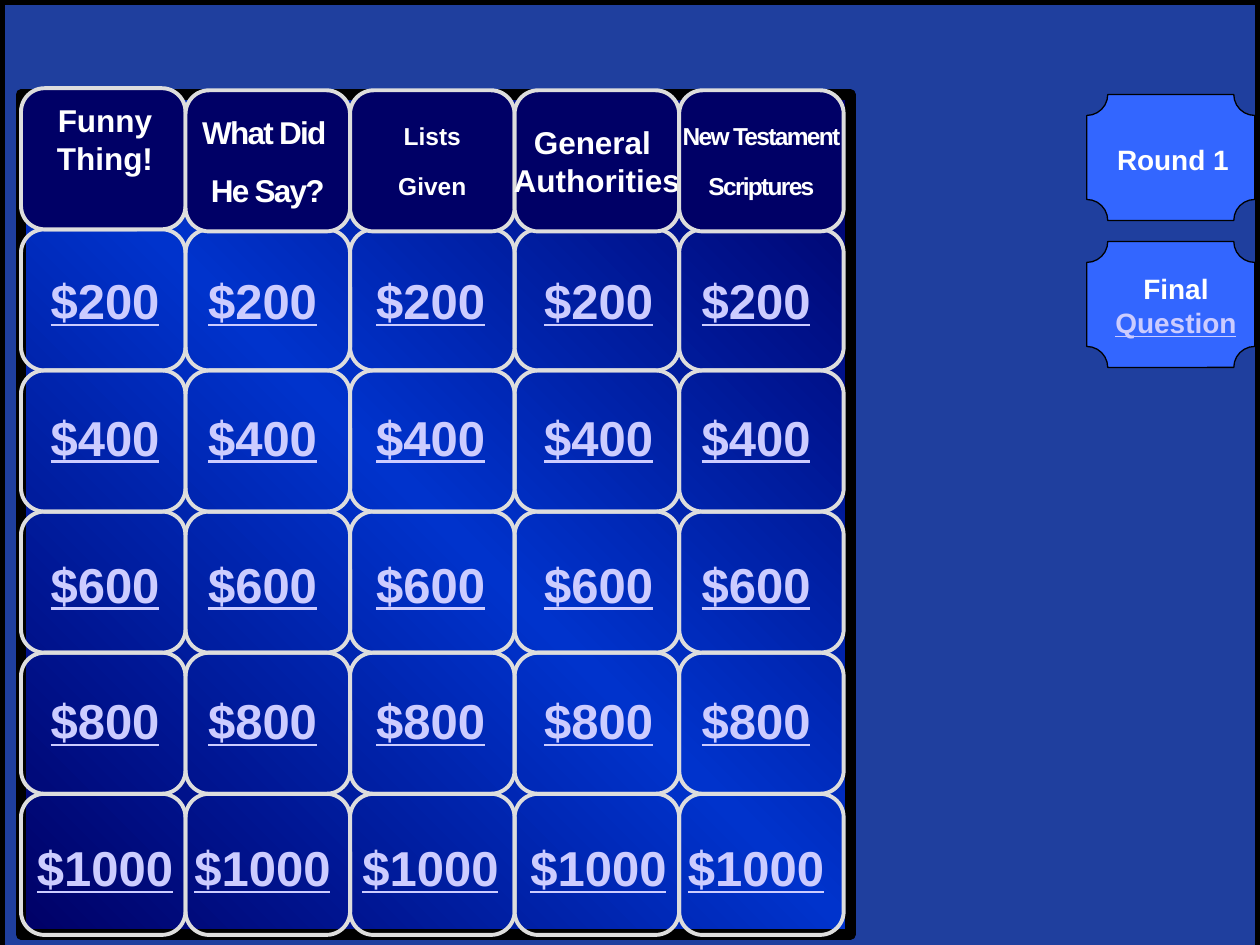
from copy import deepcopy

from pptx import Presentation
from pptx.dml.color import RGBColor as Rgb
from pptx.enum.shapes import MSO_SHAPE as Kind
from pptx.enum.text import MSO_ANCHOR as Anchor, MSO_AUTO_SIZE as Auto, PP_ALIGN as Align
from pptx.oxml.ns import qn
from pptx.util import Inches, Pt

THEME = dict(
    font="Arial", black="000000", white="FFFFFF", navy="000066", royal="0033CC",
    blue="3366FF", rim="DDDDDD", link="CCCCFF",
    small=14, label=16, head=18, prize=28,
)
UNIT = Inches(1) / 12  # the page grid has twelve units to the inch
WIDE, HIGH = 120, 90
CELL_W, CELL_H = 15.67, 13.44
LEFT, TOP = 2, 8.4


def draw(kind, x, y, w, h, fill, line, weight):
    """Add a shape placed in grid units."""
    box = page.shapes.add_shape(kind, *[int(v * UNIT) for v in (x, y, w, h)])
    box.shadow.inherit = False
    if fill:
        box.fill.solid()
        box.fill.fore_color.rgb = Rgb.from_string(THEME[fill])
    else:
        box.fill.background()
    box.line.color.rgb = Rgb.from_string(THEME[line])
    box.line.width = Pt(weight)
    return box


def write(frame, lines, size, after=0, tight=False):
    """Fill a frame with centred paragraphs, each a list of (text, colour)."""
    for i, runs in enumerate(lines):
        para = frame.add_paragraph() if i else frame.paragraphs[0]
        para.alignment = Align.CENTER
        if after:
            para.space_after = Pt(after)
        for text, color in runs:
            run = para.add_run()
            run.text = text
            font = run.font
            font.name, font.size, font.bold = THEME["font"], Pt(THEME[size]), True
            font.color.rgb = Rgb.from_string(THEME[color])
            if color == "link":
                font.underline = True
            if tight:
                run._r.get_or_add_rPr().set("spc", "-100")


deck = Presentation()
deck.slide_width, deck.slide_height = int(WIDE * UNIT), int(HIGH * UNIT)
page = deck.slides.add_slide(deck.slide_layouts[6])

# Backdrop: black under translucent blue
draw(Kind.RECTANGLE, 0, 0, WIDE, HIGH, "black", "black", 0.75)
veil = draw(Kind.RECTANGLE, 0, 0, WIDE, HIGH + 1, "blue", "black", 6)
tint = veil._element.spPr.find(qn("a:solidFill"))[0]
tint.append(tint.makeelement(qn("a:alpha"), {"val": "62000"}))

# Board with a three-stop diagonal gradient
board = draw(Kind.RECTANGLE, LEFT, 9, 79, 80, "navy", "black", 6)
board.fill.gradient()
board.fill.gradient_angle = 45
stops = board._element.spPr.find(qn("a:gradFill")).find(qn("a:gsLst"))
stops.insert(1, deepcopy(stops[0]))
for stop, place, color in zip(board.fill.gradient_stops, (0, 0.5, 1), ("navy", "royal", "navy")):
    stop.position = place
    stop.color.rgb = Rgb.from_string(THEME[color])

# Empty cells
for col in range(5):
    for row in range(1, 6):
        draw(Kind.ROUNDED_RECTANGLE, LEFT + col * CELL_W, TOP + row * CELL_H,
             CELL_W, CELL_H, None, "rim", 2.25)

# Category heads: lines, size, space after, tight spacing
heads = [
    ([], "head", 0, False),
    (["What Did ", "He Say?"], "head", 12, True),
    (["Lists", "Given"], "small", 12, False),
    (["General ", "Authorities"], "head", 0, False),
    (["New Testament", "Scriptures"], "small", 12, True),
]
for col, (lines, size, after, tight) in enumerate(heads):
    drop = 0.2 if col else 0
    cell = draw(Kind.ROUNDED_RECTANGLE, LEFT + col * CELL_W, TOP + drop,
                CELL_W, CELL_H, "navy", "rim", 2.25)
    if lines:
        cell.text_frame.word_wrap = False
        cell.text_frame.vertical_anchor = Anchor.MIDDLE
        write(cell.text_frame, [[(t, "white")] for t in lines], size, after, tight)

# Buttons at the right
for y in (9, 23):
    draw(Kind.PLAQUE, 103.5, y, 16, 12, "blue", "black", 0.75)

# Text boxes: the first head, the button labels, the prizes
notes = [
    (3, 9, 14, 8.5, [("Funny Thing!", "white")], "head"),
    (103.5, 13, 16.4, 4.4, [("Round 1", "white")], "label"),
    (104.5, 25.3, 15, 7.7, [("Final ", "white"), ("Question", "link")], "label"),
]
for y, prize in zip((25.2, 38.2, 52.2, 65.2, 79.2), (200, 400, 600, 800, 1000)):
    for x in (2, 17, 33, 49, 64):
        notes.append((x, y, 16, 6.8, [(f"${prize}", "link")], "prize"))
for x, y, w, h, runs, size in notes:
    box = page.shapes.add_textbox(*[int(v * UNIT) for v in (x, y, w, h)])
    box.text_frame.word_wrap = True
    box.text_frame.auto_size = Auto.SHAPE_TO_FIT_TEXT
    write(box.text_frame, [runs], size)

deck.save("out.pptx")
